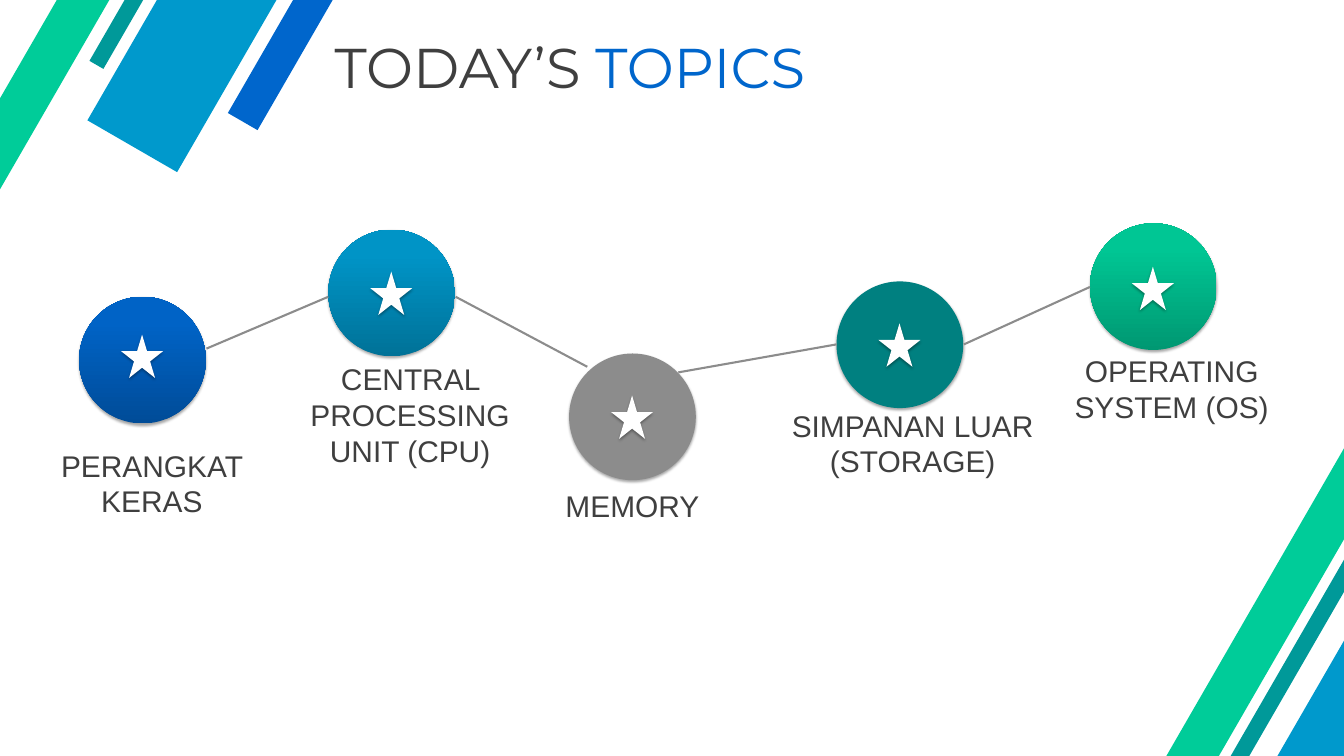
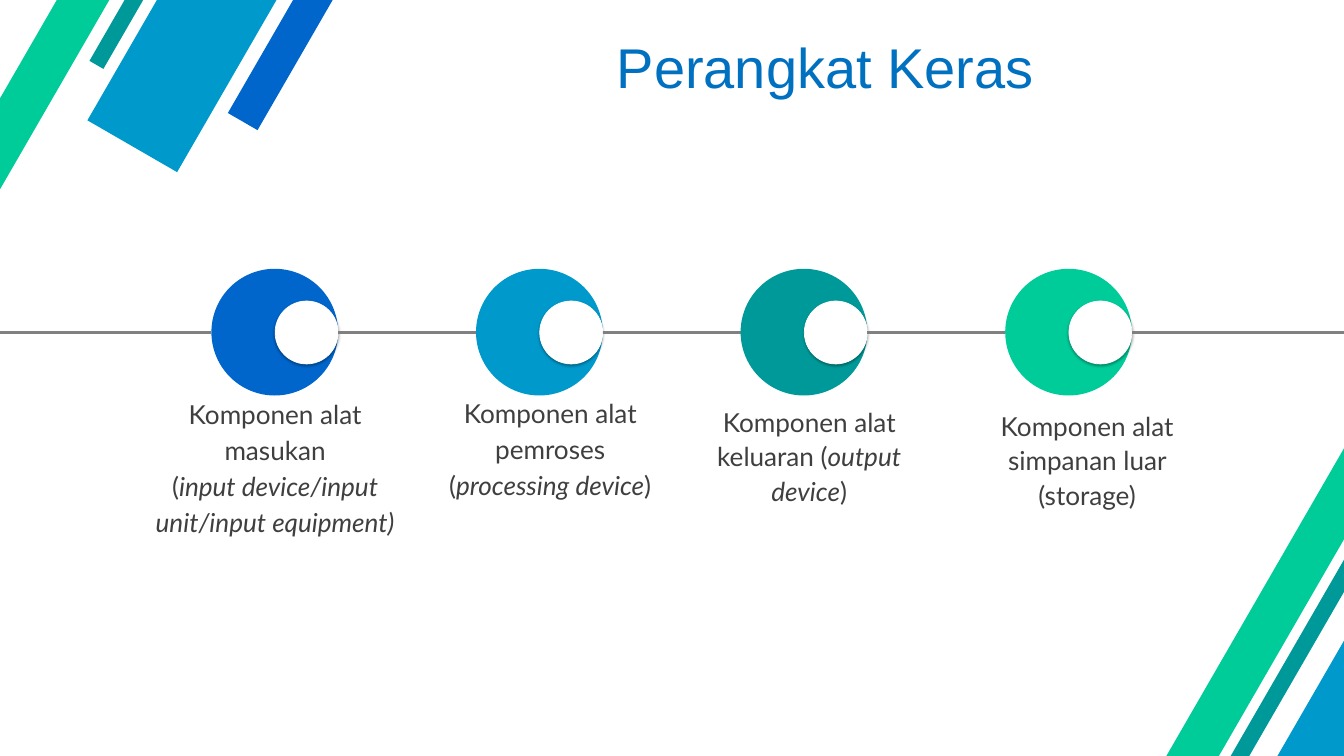
from lxml import etree
from pptx import Presentation
from pptx.dml.color import RGBColor
from pptx.enum.shapes import MSO_CONNECTOR, MSO_SHAPE as SHAPE
from pptx.enum.text import MSO_ANCHOR as ANCHOR, MSO_AUTO_SIZE as AUTO, PP_ALIGN as ALIGN
from pptx.oxml import parse_xml
from pptx.oxml.ns import nsdecls, qn
from pptx.util import Emu, Pt

PX = 9525
SLIDE_W, SLIDE_H = 1920, 1080

BLUE = RGBColor(0x00, 0x66, 0xCC)
SKY = RGBColor(0x00, 0x99, 0xCC)
TEAL = RGBColor(0x00, 0x99, 0x99)
GREEN = RGBColor(0x00, 0xCC, 0x99)
DEEP_TEAL = RGBColor(0x00, 0x80, 0x80)
GREY = RGBColor(0x8C, 0x8C, 0x8C)
AXIS_GREY = RGBColor(0x80, 0x80, 0x80)
TITLE_BLUE = RGBColor(0x00, 0x70, 0xC0)
DARK = RGBColor(0x3F, 0x3F, 0x3F)
WHITE = RGBColor(0xFF, 0xFF, 0xFF)
# Gradients run from the bottom colour to the top colour.
BLUE_FADE = (RGBColor(0x00, 0x4C, 0x98), RGBColor(0x00, 0x63, 0xC6))
SKY_FADE = (RGBColor(0x00, 0x72, 0x98), RGBColor(0x00, 0x94, 0xC6))
GREEN_FADE = (RGBColor(0x00, 0x98, 0x72), RGBColor(0x00, 0xC6, 0x94))

TITLE_BOX = (461, 43, 1436, 104)
DISC = 181
STAR_W, STAR_H = 60, 62
HOLE = 90
LABEL_W = 370

BANDS = [
    (-136, -687, 1931, 49, BLUE),
    (-293, -700, 1928, 148, SKY),
    (-345, -755, 1931, 23, TEAL),
    (-560, -525, 1926, 65, GREEN),
    (1313, 371, 1928, 148, SKY),
    (1238, 320, 1931, 23, TEAL),
    (1028, 550, 1926, 65, GREEN),
]

# disc left and top, star top, fill, label, label box
TOPICS = [
    (113, 424, 478, BLUE_FADE, "PERANGKAT KERAS", (32, 633, LABEL_W, 113)),
    (469, 328, 388, SKY_FADE, "CENTRAL PROCESSING UNIT (CPU)", (401, 509, LABEL_W, 165)),
    (813, 505, 565, GREY, "MEMORY", (780, 692, 247, 61)),
    (1195, 402, 462, DEEP_TEAL, "SIMPANAN LUAR (STORAGE)", (1119, 576, LABEL_W, 113)),
    (1557, 319, 381, GREEN_FADE, "OPERATING SYSTEM (OS)", (1489, 498, LABEL_W, 113)),
]
TOPIC_LINKS = [
    (295, 498, 469, 424),
    (651, 424, 839, 524),
    (969, 532, 1195, 492),
    (1377, 492, 1557, 410),
]

# colour, label paragraphs (*italic*), line spacing, label box
COMPONENTS = [
    (BLUE, ["Komponen alat masukan", "(*input device/input unit/input equipment)*"],
     1.15, (208, 560, LABEL_W, 213)),
    (SKY, ["Komponen alat pemroses", "(*processing device*)"],
     1.15, (601, 559, LABEL_W, 161)),
    (TEAL, ["Komponen alat", "keluaran (*output device*)"],
     1.1, (971, 572, LABEL_W, 156)),
    (GREEN, ["Komponen alat simpanan luar (storage)"],
     1.1, (1368, 578, LABEL_W, 156)),
]
FIRST_DISC, DISC_STEP, DISC_TOP = 302, 378, 384


def px(*values):
    return [Emu(v * PX) for v in values]


def add_shadow(shape):
    sp_pr = shape.element.spPr
    for old in sp_pr.findall(qn("a:effectLst")):
        sp_pr.remove(old)
    sp_pr.append(parse_xml(
        f'<a:effectLst {nsdecls("a")}><a:outerShdw blurRad="39370" dist="22860" '
        'dir="5400000" rotWithShape="0"><a:srgbClr val="000000">'
        '<a:alpha val="35000"/></a:srgbClr></a:outerShdw></a:effectLst>'))


def add_figure(s, kind, box, fill, shadow=False):
    """Add a borderless shape; a pair of colours makes a vertical gradient."""
    shape = s.shapes.add_shape(kind, *px(*box))
    shape.shadow.inherit = False
    shape.line.fill.background()
    if isinstance(fill, RGBColor):
        shape.fill.solid()
        shape.fill.fore_color.rgb = fill
    else:
        shape.fill.gradient()
        shape.fill.gradient_angle = 90
        for stop, color, position in zip(shape.fill.gradient_stops, fill, (0, 0.8)):
            stop.color.rgb = color
            stop.position = position
    if shadow:
        add_shadow(shape)
    return shape


def add_line(s, ends, color):
    line = s.shapes.add_connector(MSO_CONNECTOR.STRAIGHT, *px(*ends))
    line.line.color.rgb = color
    line.line.width = Pt(2.25)
    etree.SubElement(line.element.spPr, qn("a:effectLst"))


def add_label(s, box, paragraphs, font, size, spacing=None):
    """Add a centred, bottom-anchored label; text between asterisks is italic."""
    tf = s.shapes.add_textbox(*px(*box)).text_frame
    tf.word_wrap = True
    tf.auto_size = AUTO.SHAPE_TO_FIT_TEXT
    tf.vertical_anchor = ANCHOR.BOTTOM
    for i, text in enumerate(paragraphs):
        p = tf.add_paragraph() if i else tf.paragraphs[0]
        p.alignment = ALIGN.CENTER
        p.line_spacing = spacing
        p.font.name, p.font.size = font, Pt(size)
        p.font.color.rgb = DARK
        for j, part in enumerate(text.split("*")):
            if part:
                r = p.add_run()
                r.text = part
                if j % 2:
                    r.font.italic = True


def set_title(s, parts, font, alignment):
    title = s.shapes.title
    title.left, title.top, title.width, title.height = px(*TITLE_BOX)
    tf = title.text_frame
    tf.word_wrap = True
    tf.auto_size = AUTO.NONE
    tf.vertical_anchor = ANCHOR.MIDDLE
    tf.margin_left, tf.margin_right, tf.margin_top, tf.margin_bottom = px(17, 17, 9, 9)
    p = tf.paragraphs[0]
    p.alignment = alignment
    p.font.name, p.font.size = font, Pt(60)
    for text, color in parts:
        r = p.add_run()
        r.text = text
        r.font.color.rgb = color


def move_bands_to_layout(s, layout):
    """Draw the slanted corner bands and place them behind the layout's parts."""
    tree = layout.shapes.element
    for i, (*box, color) in enumerate(BANDS):
        band = add_figure(s, SHAPE.RECTANGLE, box, color)
        band.rotation = 300
        band.element.nvSpPr.cNvPr.set("id", str(100 + i))
        tree.insert(2 + i, band.element)


def build_topics(s):
    set_title(s, [("TODAY’S ", DARK), ("TOPICS", BLUE)], "Montserrat", ALIGN.LEFT)
    for left, top, star_top, fill, label, label_box in TOPICS:
        add_figure(s, SHAPE.OVAL, (left, top, DISC, DISC), fill, shadow=True)
        star_left = left + (DISC - STAR_W) // 2
        add_figure(s, SHAPE.STAR_5_POINT, (star_left, star_top, STAR_W, STAR_H),
                   WHITE, shadow=True)
        add_label(s, label_box, [label], "Arial", 32)
    for ends in TOPIC_LINKS:
        add_line(s, ends, GREY)


def build_components(s):
    set_title(s, [("Perangkat Keras", TITLE_BLUE)], "Arial", ALIGN.CENTER)
    middle = DISC_TOP + DISC // 2 + 1
    line_start = 0
    for i, (color, paragraphs, spacing, label_box) in enumerate(COMPONENTS):
        left = FIRST_DISC + i * DISC_STEP
        right = left + DISC
        add_line(s, (line_start, middle, left, middle), AXIS_GREY)
        line_start = right
        add_figure(s, SHAPE.OVAL, (left, DISC_TOP, DISC, DISC), color)
        hole = add_figure(s, SHAPE.OVAL, (right - HOLE, middle - HOLE // 2, HOLE, HOLE),
                          WHITE, shadow=True)
        hole.line.color.rgb = WHITE
        hole.line.width = Pt(0.75)
        add_label(s, label_box, paragraphs, "Lato", 28, spacing)
    add_line(s, (line_start, middle, SLIDE_W, middle), AXIS_GREY)


def main():
    prs = Presentation()
    prs.slide_width, prs.slide_height = px(SLIDE_W, SLIDE_H)
    layout = prs.slide_layouts.get_by_name("Title Only")
    topics, components = (prs.slides.add_slide(layout) for _ in range(2))
    move_bands_to_layout(topics, layout)
    build_topics(topics)
    build_components(components)
    prs.save("out.pptx")


if __name__ == "__main__":
    main()
